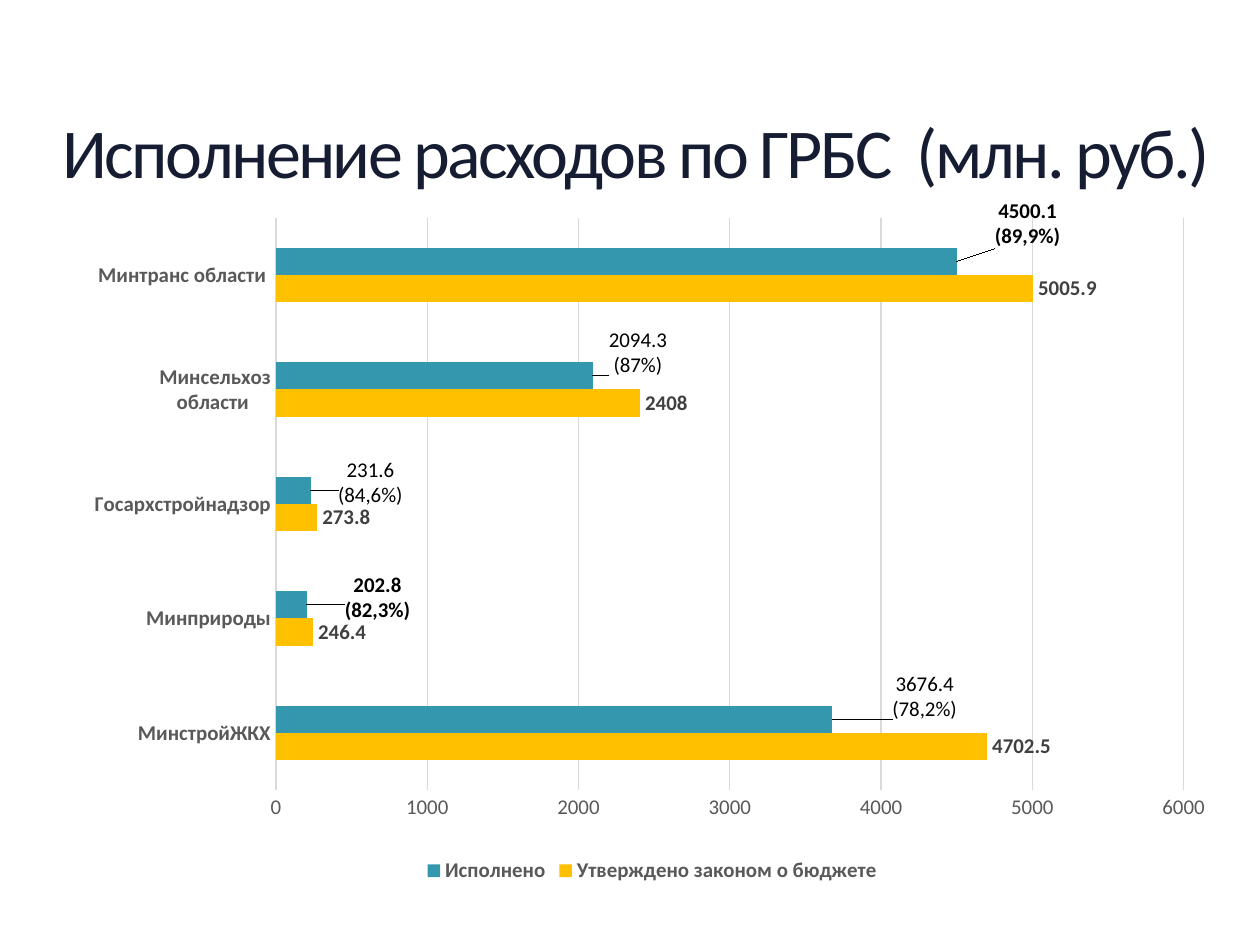
from lxml.etree import SubElement
from pptx import Presentation
from pptx.chart.data import CategoryChartData
from pptx.dml.color import RGBColor
from pptx.enum.chart import XL_CHART_TYPE, XL_LABEL_POSITION, XL_LEGEND_POSITION, XL_TICK_MARK
from pptx.enum.text import MSO_ANCHOR, MSO_AUTO_SIZE, PP_ALIGN
from pptx.oxml import parse_xml
from pptx.oxml.ns import nsdecls, qn
from pptx.util import Inches, Pt


def color(text):
    """Turn a hex string into a colour."""
    return RGBColor.from_string(text)


def style(font, size=12, fill="595959", bold=False):
    """Format a font."""
    font.name, font.size, font.bold = "Calibri", Pt(size), bold
    font.color.rgb = color(fill)


def write(frame, text, align=PP_ALIGN.CENTER, space=None, track=None, **form):
    """Fill a text frame, one paragraph a line, and format it."""
    for i, line in enumerate(text.split("\n")):
        para = frame.paragraphs[0] if i == 0 else frame.add_paragraph()
        para.alignment = align
        if space:
            para.line_spacing = space
        run = para.add_run()
        run.text = line
        style(run.font, **form)
        if track:
            run.font._element.set("spc", str(track))


def place(node, **spots):
    """Build a manual chart layout and put it into a node."""
    layout = parse_xml(f"<c:layout {nsdecls('c')}/>")
    manual = SubElement(layout, qn("c:manualLayout"))
    for key, val in spots.items():
        SubElement(manual, qn("c:" + key)).set("val", str(val))
    for old in node.findall(qn("c:layout")):
        node.remove(old)
    node.insert(1 if node.tag == qn("c:dLbl") else 0, layout)


class Deck:
    """Hold the style and the current slide."""

    dark, grid, ink = "161D32", "D9D9D9", "000000"

    def __init__(self):
        """Start a deck with one title slide."""
        self.prs = Presentation()
        self.prs.slide_width, self.prs.slide_height = Inches(10), Inches(7.5)
        self.slide = self.prs.slides.add_slide(self.prs.slide_layouts[5])

    def title(self, text, *box):
        """Place and fill the title."""
        shape = self.slide.shapes.title
        shape.left, shape.top, shape.width, shape.height = map(Inches, box)
        frame = shape.text_frame
        frame.margin_left = frame.margin_right = frame.margin_top = frame.margin_bottom = 0
        frame.vertical_anchor, frame.auto_size = MSO_ANCHOR.MIDDLE, MSO_AUTO_SIZE.NONE
        frame.word_wrap = True
        write(frame, text, space=0.9, track=-150, size=40, fill=self.dark)

    def bars(self, names, rows, *box):
        """Add a clustered bar chart and return it."""
        data = CategoryChartData()
        data.categories = names
        for name, vals, _, _ in rows:
            data.add_series(name, vals)
        chart = self.slide.shapes.add_chart(
            XL_CHART_TYPE.BAR_CLUSTERED, *map(Inches, box), data).chart
        style(chart.font, 10, self.ink)
        chart.has_title = False
        chart.has_legend = True
        chart.legend.position = XL_LEGEND_POSITION.BOTTOM
        chart.legend.include_in_layout = False
        style(chart.legend.font, bold=True)
        self.axes(chart)
        plot = chart.plots[0]
        plot.gap_width, plot.overlap, plot.vary_by_categories = 219, 0, False
        for ser, (_, _, fill, ink) in zip(plot.series, rows):
            ser.format.fill.solid()
            ser.format.fill.fore_color.rgb = color(fill)
            tags = ser.data_labels
            tags.show_value, tags.position = True, XL_LABEL_POSITION.OUTSIDE_END
            style(tags.font, fill=ink, bold=True)
        place(chart._chartSpace.chart.plotArea, layoutTarget="inner", xMode="edge",
              yMode="edge", x=0.16, y=0.11, w=0.82, h=0.76)
        return chart

    def axes(self, chart):
        """Format both axes and the grid."""
        cat, val = chart.category_axis, chart.value_axis
        for axis in (cat, val):
            axis.major_tick_mark = axis.minor_tick_mark = XL_TICK_MARK.NONE
            style(axis.tick_labels.font, bold=axis is cat)
        val.minimum_scale, val.maximum_scale, val.major_unit = 0, 6000, 1000
        val.format.line.fill.background()
        val.has_major_gridlines = True
        for line in (cat.format.line, val.major_gridlines.format.line):
            line.color.rgb, line.width = color(self.grid), Pt(0.75)

    def tag(self, point, text, x, y, bold):
        """Give a bar its own label, shifted from its end."""
        label = point.data_label
        write(label.text_frame, text, fill=self.ink, bold=bold)
        label.position = XL_LABEL_POSITION.OUTSIDE_END
        place(label._dLbl, x=x, y=y)


def main():
    """Build and save the slide."""
    deck = Deck()
    deck.title("Исполнение расходов по ГРБС  (млн. руб.)", 0.28, 0.92, 9.53, 0.63)
    names = ["МинстройЖКХ", "Минприроды", "Госархстройнадзор",
             "Минсельхоз области ", "Минтранс области "]
    done = [3676.4, 202.8, 231.6, 2094.3, 4500.1]
    rows = [("Утверждено законом о бюджете", [4702.5, 246.4, 273.8, 2408, 5005.9],
             "FFC000", "404040"),
            ("Исполнено", done, "3497AE", deck.ink)]
    chart = deck.bars(names, rows, 0.75, 1.07, 8.82, 5.98)
    tags = [("78,2%", 0.05, -0.03, False), ("82,3%", 0.03, -0.01, True),
            ("84,6%", 0.02, -0.01, False), ("87%", 0.01, -0.03, False),
            ("89,9%", 0.03, -0.05, True)]
    points = chart.plots[0].series[1].points
    for i, (share, x, y, bold) in enumerate(tags):
        deck.tag(points[i], f"{done[i]}\n({share})", x, y, bold)
    deck.prs.save("out.pptx")


if __name__ == "__main__":
    main()
